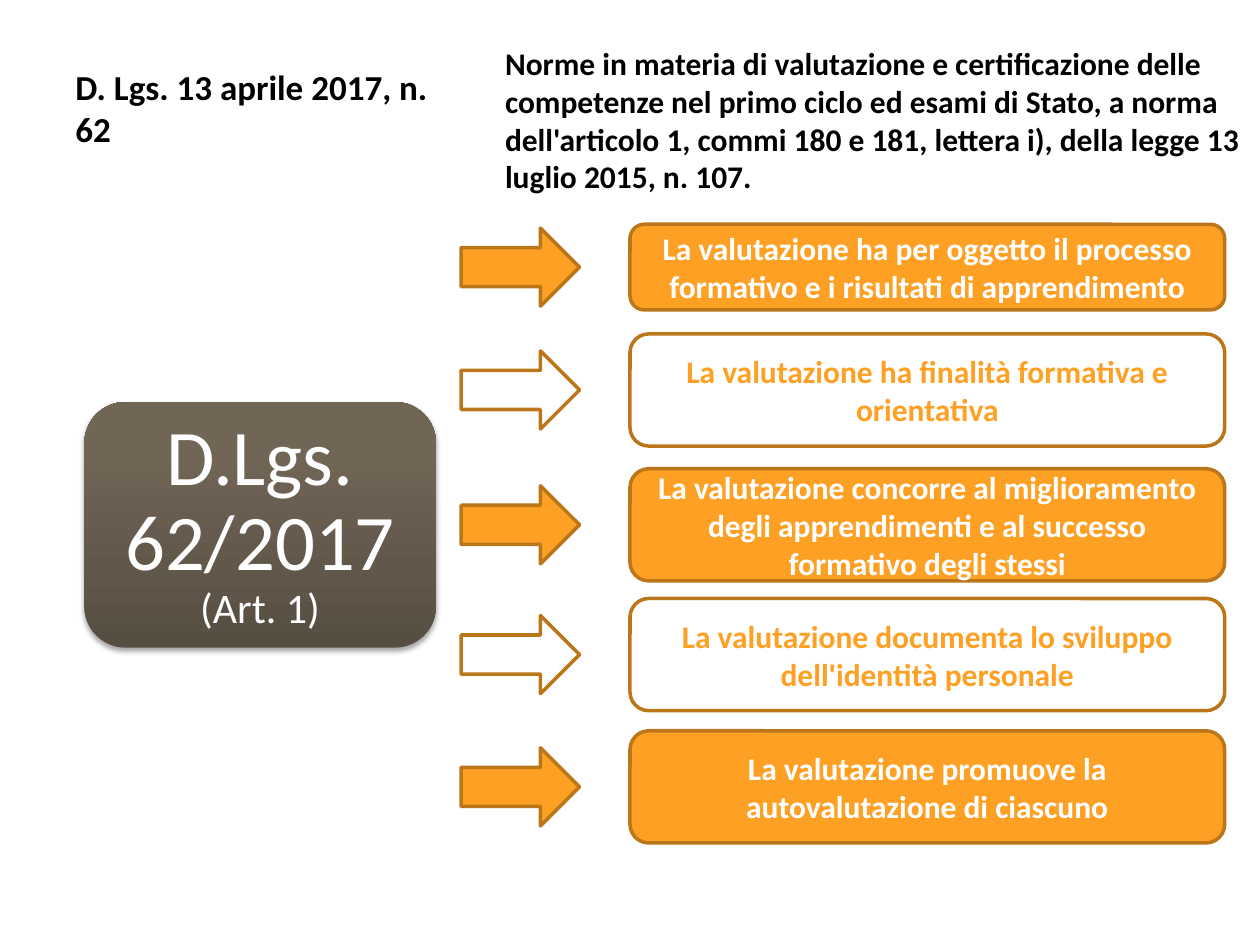
from copy import deepcopy
from dataclasses import dataclass

from lxml import etree
from pptx import Presentation
from pptx import util as u
from pptx.dml.color import RGBColor
from pptx.enum import shapes, text
from pptx.oxml.ns import qn

COLS, ROWS = 100, 75
WIDTH, HEIGHT = u.Inches(10), u.Inches(7.5)


@dataclass(frozen=True)
class Theme:
    """Colours, font and type sizes of the slide."""
    font: str = "Calibri"
    ink: str = "000000"
    paper: str = "FFFFFF"
    accent: str = "FDA023"
    edge: str = "BB761A"
    gradient: tuple = ((0, "574E42"), (0.8, "716556"), (1, "726656"))
    title: int = 20
    body: int = 18
    source: int = 45
    article: int = 24
    line: int = 2


THEME = Theme()

RULES = (
    (17.8, 6.8, ["La valutazione ha per oggetto il processo formativo e i risultati di apprendimento"]),
    (26.5, 8.9, ["La valutazione ha finalità formativa e orientativa"]),
    (37.2, 8.9, ["La valutazione concorre al miglioramento",
                  "degli apprendimenti e al successo formativo degli stessi"]),
    (47.5, 8.9, ["La valutazione documenta lo sviluppo dell'identità personale"]),
    (58, 8.9, ["La valutazione promuove la autovalutazione di ciascuno"]),
)


def place(box):
    """Turn columns and rows of the grid into slide lengths."""
    x, y, w, h = box
    return (round(x * WIDTH / COLS), round(y * HEIGHT / ROWS),
            round(w * WIDTH / COLS), round(h * HEIGHT / ROWS))


def write(p, words, size, color, bold=True, align=text.PP_ALIGN.LEFT):
    """Add one styled run to a paragraph."""
    p.alignment = align
    r = p.add_run()
    r.text = words
    r.font.name, r.font.size, r.font.bold = THEME.font, u.Pt(size), bold
    r.font.color.rgb = RGBColor.from_string(color)


def add_text(parent, box, anchor):
    """Add a wrapping text box and return its frame."""
    tf = parent.add_textbox(*place(box)).text_frame
    tf.word_wrap, tf.vertical_anchor = True, anchor
    return tf


def add_outlined(s, kind, box, fill):
    """Add a filled preset shape with the common outline."""
    sp = s.shapes.add_shape(kind, *place(box))
    sp.shadow.inherit = False
    sp.fill.solid()
    sp.fill.fore_color.rgb = RGBColor.from_string(fill)
    sp.line.color.rgb = RGBColor.from_string(THEME.edge)
    sp.line.width = u.Pt(THEME.line)
    return sp


def add_heading(s, box):
    """Place the decree's name and its subject side by side."""
    x, y, w, h = box
    tf = add_text(s.shapes, (x, y, 32.9, 12.7), text.MSO_ANCHOR.BOTTOM)
    tf.margin_bottom = u.Inches(0.38)
    write(tf.paragraphs[0], "D. Lgs. 13 aprile 2017, n. 62", THEME.title, THEME.ink)
    tf = add_text(s.shapes, (x + 34.1, y, w - 34.1, h), text.MSO_ANCHOR.TOP)
    p = tf.paragraphs[0]
    p.space_before = u.Pt(0.2 * THEME.body)
    write(p, "Norme in materia di valutazione e certificazione delle competenze nel primo "
          "ciclo ed esami di Stato, a norma dell'articolo 1, commi 180 e 181, lettera i), "
          "della legge 13 luglio 2015, n. 107.", THEME.body, THEME.ink)


def shade(sp):
    """Give a shape the theme's gradient and a soft shadow below."""
    sp.fill.gradient()
    sp.fill.gradient_angle = 90
    stops = sp._element.spPr.find(qn("a:gradFill")).find(qn("a:gsLst"))
    stops.insert(1, deepcopy(stops[0]))
    for stop, (position, color) in zip(sp.fill.gradient_stops, THEME.gradient):
        stop.position = position
        stop.color.rgb = RGBColor.from_string(color)
    sp.line.fill.background()
    sp.shadow.inherit = False
    effects = sp._element.spPr.find(qn("a:effectLst"))
    shadow = etree.SubElement(effects, qn("a:outerShdw"), blurRad=str(u.Pt(3.1)),
                              dist=str(u.Pt(1.8)), dir="5400000", rotWithShape="0")
    color = etree.SubElement(shadow, qn("a:srgbClr"), val=THEME.ink)
    etree.SubElement(color, qn("a:alpha"), val="35000")


def add_source(s, box):
    """Place the dark card that names the decree and article."""
    x, y, w, h = box
    group = s.shapes.add_group_shape().shapes
    sp = group.add_shape(shapes.MSO_SHAPE.ROUNDED_RECTANGLE, *place(box))
    shade(sp)
    tf = add_text(group, (x + 0.95, y + 0.95, w - 1.9, h - 1.9), text.MSO_ANCHOR.MIDDLE)
    tf.margin_left = tf.margin_right = tf.margin_top = tf.margin_bottom = u.Inches(0.19)
    lines = (("D.Lgs. 62/2017", THEME.source), ("(Art. 1)", THEME.article))
    for i, (words, size) in enumerate(lines):
        p = tf.add_paragraph() if i else tf.paragraphs[0]
        p.line_spacing = 0.9
        write(p, words, size, THEME.paper, False, text.PP_ALIGN.CENTER)


def add_rule(s, box, lines, fill, color):
    """Place an arrow and, to its right, the card it points to."""
    x, y, w, h = box
    arrow_w, arrow_h, card_x = 9.4, 6.2, 13.4
    add_outlined(s, shapes.MSO_SHAPE.RIGHT_ARROW,
                 (x, y + (h - arrow_h) / 2, arrow_w, arrow_h), fill)
    card = add_outlined(s, shapes.MSO_SHAPE.ROUNDED_RECTANGLE,
                        (x + card_x, y, w - card_x, h), fill)
    tf = card.text_frame
    tf.word_wrap, tf.vertical_anchor = True, text.MSO_ANCHOR.MIDDLE
    for i, words in enumerate(lines):
        p = tf.add_paragraph() if i else tf.paragraphs[0]
        write(p, words, THEME.body, color, align=text.PP_ALIGN.CENTER)


def main():
    """Build and save the slide."""
    prs = Presentation()
    prs.slide_width, prs.slide_height = WIDTH, HEIGHT
    s = prs.slides.add_slide(prs.slide_layouts[6])
    add_heading(s, (5, 3, 95, 72))
    add_source(s, (6.7, 31.9, 27.9, 19.5))
    for i, (top, height, lines) in enumerate(RULES):
        pair = (THEME.paper, THEME.accent) if i % 2 else (THEME.accent, THEME.paper)
        add_rule(s, (36.6, top, 60.6, height), lines, *pair)
    prs.save("out.pptx")


if __name__ == "__main__":
    main()
